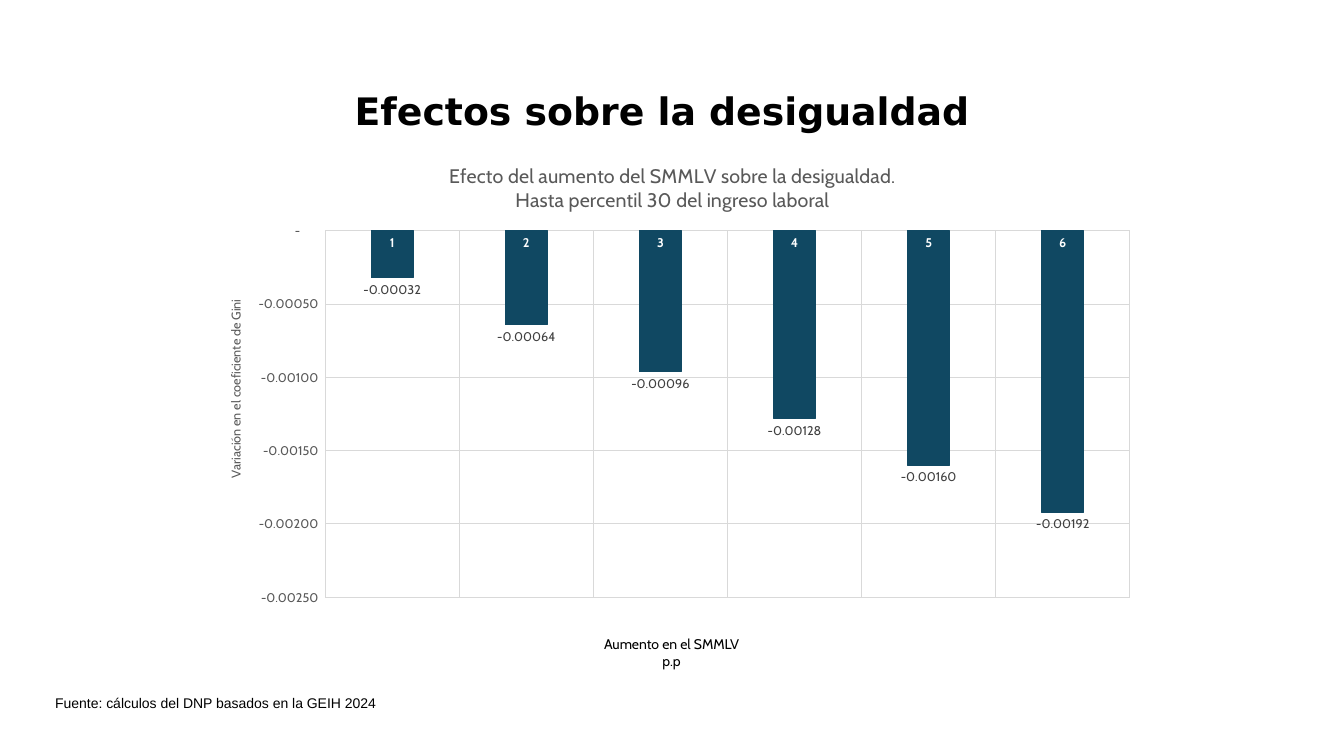
from lxml import etree
from pptx import Presentation
from pptx import util as u
from pptx.chart.data import CategoryChartData
from pptx.dml.color import RGBColor
from pptx.enum import chart as charts, text
from pptx.oxml.ns import qn

BLACK = RGBColor(0x00, 0x00, 0x00)
WHITE = RGBColor(0xFF, 0xFF, 0xFF)
GRAY = RGBColor(0x59, 0x59, 0x59)
LABEL_GRAY = RGBColor(0x40, 0x40, 0x40)
GRID_GRAY = RGBColor(0xD9, 0xD9, 0xD9)
BAR_BLUE = RGBColor(0x10, 0x48, 0x62)

GINI_CHANGES = [-0.00032, -0.00064, -0.00096, -0.00128, -0.0016, -0.00192]
GINI_FORMAT = '_-* #,##0.00000_-;\\-* #,##0.00000_-;_-* "-"??_-;_-@_-'


def place(parent, index, target=None, **fractions):
    """Give a chart part a manual layout in fractions of the chart."""
    for old_layout in parent.findall(qn("c:layout")):
        parent.remove(old_layout)
    layout = etree.Element(qn("c:layout"))
    manual = etree.SubElement(layout, qn("c:manualLayout"))
    if target:
        etree.SubElement(manual, qn("c:layoutTarget")).set("val", target)
    for axis in "xy":
        etree.SubElement(manual, qn(f"c:{axis}Mode")).set("val", "edge")
    for name, value in fractions.items():
        etree.SubElement(manual, qn(f"c:{name}")).set("val", str(value))
    parent.insert(index, layout)


class SlideBuilder:
    def __init__(self, slide, font="Cabin"):
        self.slide = slide
        self.font = font

    def style(self, font, size, color, bold=False, name=None):
        font.name = name or self.font
        font.size = u.Pt(size)
        font.color.rgb = color
        font.bold = bold

    def add_lines(self, frame, lines, size, color, align=None, **options):
        for index, line in enumerate(lines):
            paragraph = frame.add_paragraph() if index else frame.paragraphs[0]
            paragraph.alignment = align
            run = paragraph.add_run()
            run.text = line
            self.style(run.font, size, color, **options)

    def text_box(self, box, lines, size, align=text.PP_ALIGN.LEFT, **options):
        frame = self.slide.shapes.add_textbox(*map(u.Cm, box)).text_frame
        frame.word_wrap = True
        frame.vertical_anchor = text.MSO_ANCHOR.MIDDLE
        self.add_lines(frame, lines, size, BLACK, align, **options)

    def rule(self, line, color):
        line.color.rgb = color
        line.width = u.Pt(0.75)

    def column_chart(self, box, values, title_lines, axis_title):
        data = CategoryChartData()
        data.categories = [str(n) for n in range(1, len(values) + 1)]
        data.add_series("Series 1", values)
        chart = self.slide.shapes.add_chart(
            charts.XL_CHART_TYPE.COLUMN_CLUSTERED, *map(u.Cm, box), data).chart
        self.style(chart.font, 10, BLACK)
        chart.has_legend = False
        plot_area = chart.plots[0]._element.getparent()
        place(plot_area, 0, "inner", x=0.136, y=0.191, w=0.845, h=0.77)

        # Chart title
        chart.has_title = True
        title = chart.chart_title
        self.add_lines(title.text_frame, title_lines, 14, GRAY)
        place(title._element, 1, x=0.263, y=0.04)

        # Axes
        for axis, color, bold in ((chart.category_axis, WHITE, True),
                                  (chart.value_axis, GRAY, False)):
            axis.major_tick_mark = charts.XL_TICK_MARK.NONE
            axis.minor_tick_mark = charts.XL_TICK_MARK.NONE
            axis.has_major_gridlines = True
            self.rule(axis.major_gridlines.format.line, GRID_GRAY)
            self.style(axis.tick_labels.font, 9, color, bold)
        self.rule(chart.category_axis.format.line, GRID_GRAY)
        value_axis = chart.value_axis
        value_axis.format.line.fill.background()
        value_axis.minimum_scale, value_axis.maximum_scale = -0.0025, 0
        value_axis.major_unit = 0.0005
        value_axis.tick_labels.number_format = GINI_FORMAT
        value_axis.tick_labels.number_format_is_linked = False

        # Value axis title, read upwards
        title = value_axis.axis_title
        self.add_lines(title.text_frame, [axis_title], 9, GRAY)
        body = title._element.find(".//" + qn("a:bodyPr"))
        body.set("rot", "-5400000")
        body.set("vert", "horz")
        place(title._element, 1, x=0.03, y=0.33)

        # Columns and their labels
        plot = chart.plots[0]
        plot.vary_by_categories = False
        plot.gap_width, plot.overlap = 219, -27
        series = plot.series[0]
        series.invert_if_negative = False
        series.format.fill.solid()
        series.format.fill.fore_color.rgb = BAR_BLUE
        self.rule(series.format.line, BAR_BLUE)
        labels = series.data_labels
        labels.show_value = True
        labels.position = charts.XL_LABEL_POSITION.OUTSIDE_END
        labels.number_format = "0.00000"
        labels.number_format_is_linked = False
        self.style(labels.font, 9, LABEL_GRAY)


def main():
    presentation = Presentation()
    presentation.slide_width = u.Cm(33.87)
    presentation.slide_height = u.Cm(19.05)
    builder = SlideBuilder(
        presentation.slides.add_slide(presentation.slide_layouts[6]))
    center = text.PP_ALIGN.CENTER

    # Heading
    builder.text_box((2.08, 2.08, 29.21, 1.4), ["Efectos sobre la desigualdad"],
                     27, center, bold=True, name="DejaVu Sans")

    # Chart and the caption of its horizontal axis
    builder.column_chart(
        (4.93, 3.53, 24, 11.99), GINI_CHANGES,
        ["Efecto del aumento del SMMLV sobre la desigualdad.",
         "Hasta percentil 30 del ingreso laboral"],
        "Variación en el coeficiente de Gini")
    builder.text_box((14.6, 15.88, 4.65, 1.12), ["Aumento en el SMMLV", "p.p"],
                     10, center)

    # Source note
    builder.text_box((1.14, 17.33, 29.57, 0.76),
                     ["Fuente: cálculos del DNP basados en la GEIH 2024"],
                     10, name="Arial")

    presentation.save("out.pptx")


if __name__ == "__main__":
    main()
